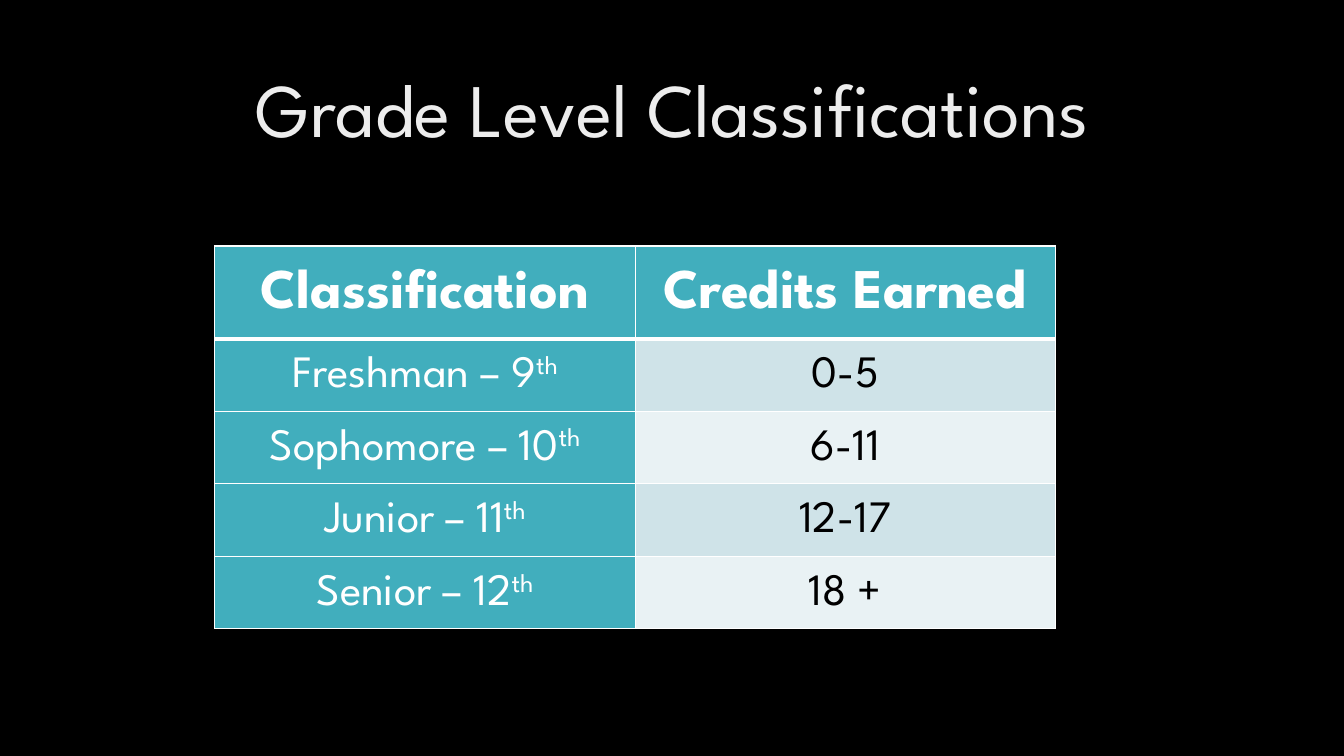
"""Build the grade level classifications slide."""
from lxml.etree import SubElement
from pptx import Presentation
from pptx.dml.color import RGBColor
from pptx.enum.text import MSO_ANCHOR, MSO_AUTO_SIZE, PP_ALIGN
from pptx.oxml.ns import qn
from pptx.util import Inches, Pt

COLORS = {
    "background": "000000",
    "title": "EDEDED",
    "white": "FFFFFF",
    "black": "000000",
    "teal": "41AEBD",
    "band_dark": "CFE3E8",
    "band_light": "E9F2F4",
}
FORMATS = {
    "title": {"name": "League Spartan", "size": Pt(54), "bold": False},
    "header": {"name": "League Spartan", "size": Pt(40), "bold": True},
    "body": {"name": "League Spartan", "size": Pt(32), "bold": False},
}
ROWS = [
    ("Classification", "", "Credits Earned"),
    ("Freshman – 9", "th", "0-5"),
    ("Sophomore – 10", "th", "6-11"),
    ("Junior – 11", "th", "12-17"),
    ("Senior – 12", "th", "18 +"),
]
CELL_LAYOUT = {
    "margin_left": Inches(0.07),
    "margin_right": Inches(0.07),
    "margin_top": 0,
    "margin_bottom": 0,
    "vertical_anchor": MSO_ANCHOR.MIDDLE,
}


def add_span(para, text, style, color):
    span = para.add_run()
    span.text = text
    for name, value in FORMATS[style].items():
        setattr(span.font, name, value)
    span.font.color.rgb = RGBColor.from_string(COLORS[color])
    return span


def add_border(cell, side, width):
    line = SubElement(cell._tc.get_or_add_tcPr(), qn(f"a:ln{side}"), w=str(Pt(width)))
    fill = SubElement(line, qn("a:solidFill"))
    SubElement(fill, qn("a:srgbClr"), val=COLORS["white"])


deck = Presentation()
deck.slide_width, deck.slide_height = Inches(13.33), Inches(7.5)
page = deck.slides.add_slide(deck.slide_layouts[5])
page.background.fill.solid()
page.background.fill.fore_color.rgb = RGBColor.from_string(COLORS["background"])

title = page.shapes.title
title.left, title.top = Inches(0.92), Inches(0.4)
title.width, title.height = Inches(11.5), Inches(1.45)
title.text_frame.auto_size = MSO_AUTO_SIZE.NONE
title.text_frame.vertical_anchor = MSO_ANCHOR.MIDDLE
para = title.text_frame.paragraphs[0]
para.alignment, para.line_spacing = PP_ALIGN.CENTER, 0.9
add_span(para, "Grade Level Classifications", "title", "title")

table = page.shapes.add_table(
    len(ROWS), 2, Inches(2.13), Inches(2.44), Inches(8.34), Inches(3.8)
).table
table.first_col = True

for row_index, (label, suffix, credits) in enumerate(ROWS):
    is_header = row_index == 0
    style = "header" if is_header else "body"
    band = "band_dark" if row_index % 2 else "band_light"
    table.rows[row_index].height = Inches(0.92 if is_header else 0.72)
    for column_index, text in enumerate((label, credits)):
        is_teal = is_header or column_index == 0
        cell = table.cell(row_index, column_index)
        for name, value in CELL_LAYOUT.items():
            setattr(cell, name, value)
        widths = {"L": 1, "R": 1, "T": 3 if row_index == 1 else 1, "B": 3 if is_header else 1}
        for side, width in widths.items():
            add_border(cell, side, width)
        cell.fill.solid()
        cell.fill.fore_color.rgb = RGBColor.from_string(COLORS["teal" if is_teal else band])
        para = cell.text_frame.paragraphs[0]
        para.alignment, para.line_spacing = PP_ALIGN.CENTER, 1.1
        add_span(para, text, style, "white" if is_teal else "black")
        if suffix and column_index == 0:
            span = add_span(para, suffix, style, "white")
            span._r.get_or_add_rPr().set("baseline", "30000")

deck.save("out.pptx")
